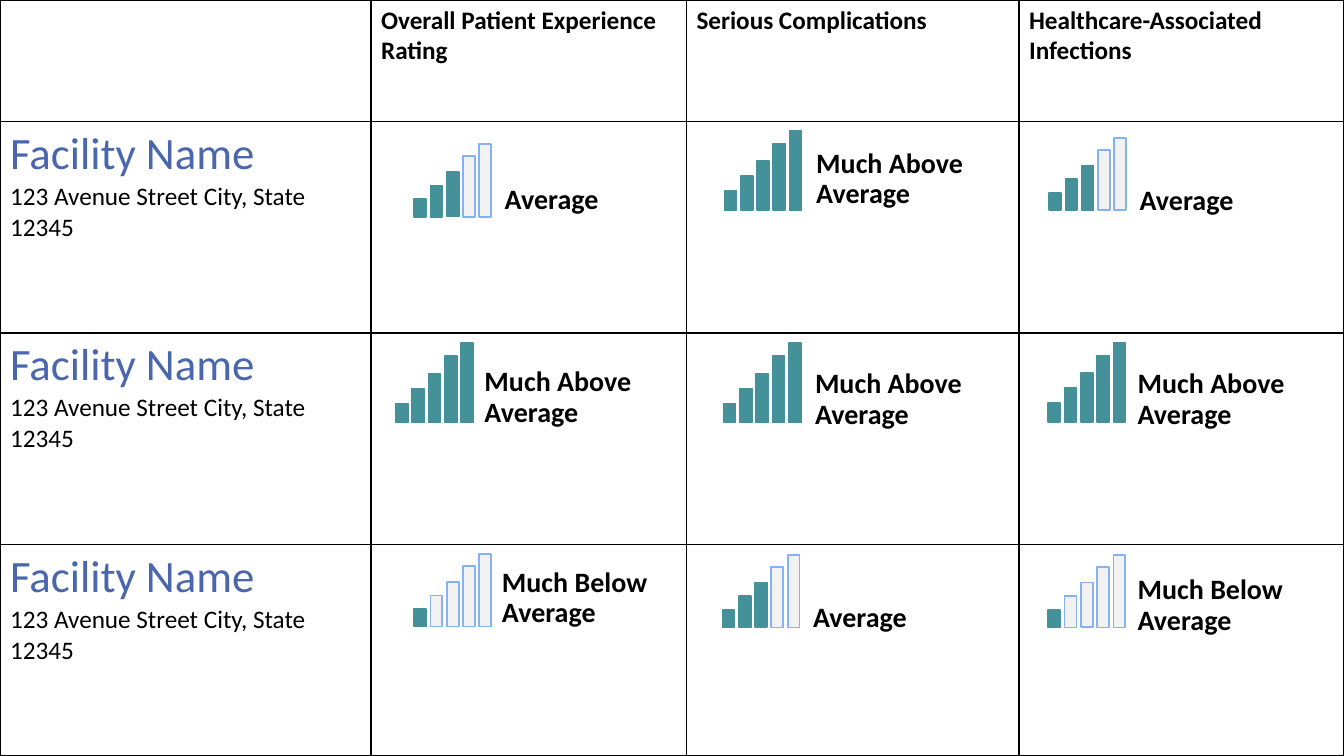
from lxml import etree
from pptx import Presentation
from pptx.dml.color import RGBColor
from pptx.enum.shapes import MSO_SHAPE
from pptx.enum.text import MSO_ANCHOR
from pptx.oxml.ns import qn
from pptx.util import Cm, Pt

RECT = MSO_SHAPE.RECTANGLE
TOP = MSO_ANCHOR.TOP

COLORS = {
    "white": "FFFFFF", "black": "000000", "blue": "4A66AC",
    "teal": "459199", "gray": "F2F2F2", "sky": "85B2F6",
}
FONTS = {
    "head": {"name": "Calibri", "size": Pt(18), "bold": True},
    "title": {"name": "Calibri", "size": Pt(32), "bold": False},
    "street": {"name": "Calibri", "size": Pt(18), "bold": False},
    "rating": {"name": "Calibri", "size": Pt(20), "bold": True},
}


def paint(format, color):
    format.solid()
    format.fore_color.rgb = RGBColor.from_string(COLORS[color])


def write(para, text, style, color="black"):
    run = para.add_run()
    run.text = text
    for key, value in FONTS[style].items():
        setattr(run.font, key, value)
    paint(run.font.fill, color)


deck = Presentation()
deck.slide_width, deck.slide_height = Cm(33.87), Cm(19.05)
slide = deck.slides.add_slide(deck.slide_layouts[6])

# Table grid
widths = [9.35, 7.95, 8.38, 8.19]
heights = [3.06, 5.33, 5.33, 5.33]
table = slide.shapes.add_table(
    len(heights), len(widths), 0, 0, deck.slide_width, deck.slide_height).table
table.first_row = table.horz_banding = False
for col, width in zip(table.columns, widths):
    col.width = Cm(width)
for row, height in zip(table.rows, heights):
    row.height = Cm(height)

# Cell borders and fills
for cell in table.iter_cells():
    props = cell._tc.get_or_add_tcPr()
    for side in ("a:lnL", "a:lnR", "a:lnT", "a:lnB"):
        edge = etree.SubElement(props, qn(side), w=str(Pt(1)))
        solid = etree.SubElement(edge, qn("a:solidFill"))
        etree.SubElement(solid, qn("a:srgbClr"), val=COLORS["black"])
    paint(cell.fill, "white")

# Table text
heads = ["Overall Patient Experience Rating", "Serious Complications",
         "Healthcare-Associated Infections"]
for col, head in enumerate(heads, 1):
    write(table.cell(0, col).text_frame.paragraphs[0], head, "head")
for row in range(1, len(heights)):
    frame = table.cell(row, 0).text_frame
    write(frame.paragraphs[0], "Facility Name", "title", "blue")
    for line in ("123 Avenue Street City, State", "12345"):
        write(frame.add_paragraph(), line, "street")

# Ratings by level: label, bar scale, label box size
RATINGS = {
    1: ("Much Below Average", 0.91, (6.15, 1.73)),
    3: ("Average", 0.91, (6.35, 0.64)),
    5: ("Much Above Average", 1, (6.15, 1.73)),
}
BARS = [0.48, 0.86, 1.24, 1.68, 2.01]
STEP, WIDTH = 0.41, 0.3

# Level, bars left and bottom, label left and top, line spacing
meters = [
    (3, 10.44, 5.46, 12.47, 4.67, 0.7),
    (5, 18.26, 5.3, 20.32, 3.63, 0.9),
    (3, 26.44, 5.3, 28.47, 4.57, 0.9),
    (5, 9.98, 10.65, 11.96, 9.14, 0.9),
    (5, 18.24, 10.65, 20.29, 9.19, 0.9),
    (5, 26.42, 10.64, 28.42, 9.19, 0.9),
    (1, 10.44, 15.79, 12.4, 14.2, 0.9),
    (3, 18.21, 15.81, 20.24, 15.09, 0.9),
    (1, 26.42, 15.81, 28.42, 14.38, 0.9),
]
for level, left, base, x, y, space in meters:
    label, scale, size = RATINGS[level]

    # Signal bars
    group = slide.shapes.add_group_shape()
    for i, bar in enumerate(BARS):
        tall = bar * scale
        shape = group.shapes.add_shape(
            RECT, Cm(left + i * STEP), Cm(base - tall), Cm(WIDTH), Cm(tall))
        shape.shadow.inherit = False
        fill, line = ("teal", "teal") if i < level else ("gray", "sky")
        paint(shape.fill, fill)
        paint(shape.line.fill, line)
        shape.line.width = Pt(1.25)

    # Rating label
    box = slide.shapes.add_textbox(Cm(x), Cm(y), *map(Cm, size))
    frame = box.text_frame
    frame.word_wrap = True
    frame.vertical_anchor = TOP
    para = frame.paragraphs[0]
    para.line_spacing = space
    para.space_before = Pt(10)
    write(para, label, "rating")

deck.save("out.pptx")
